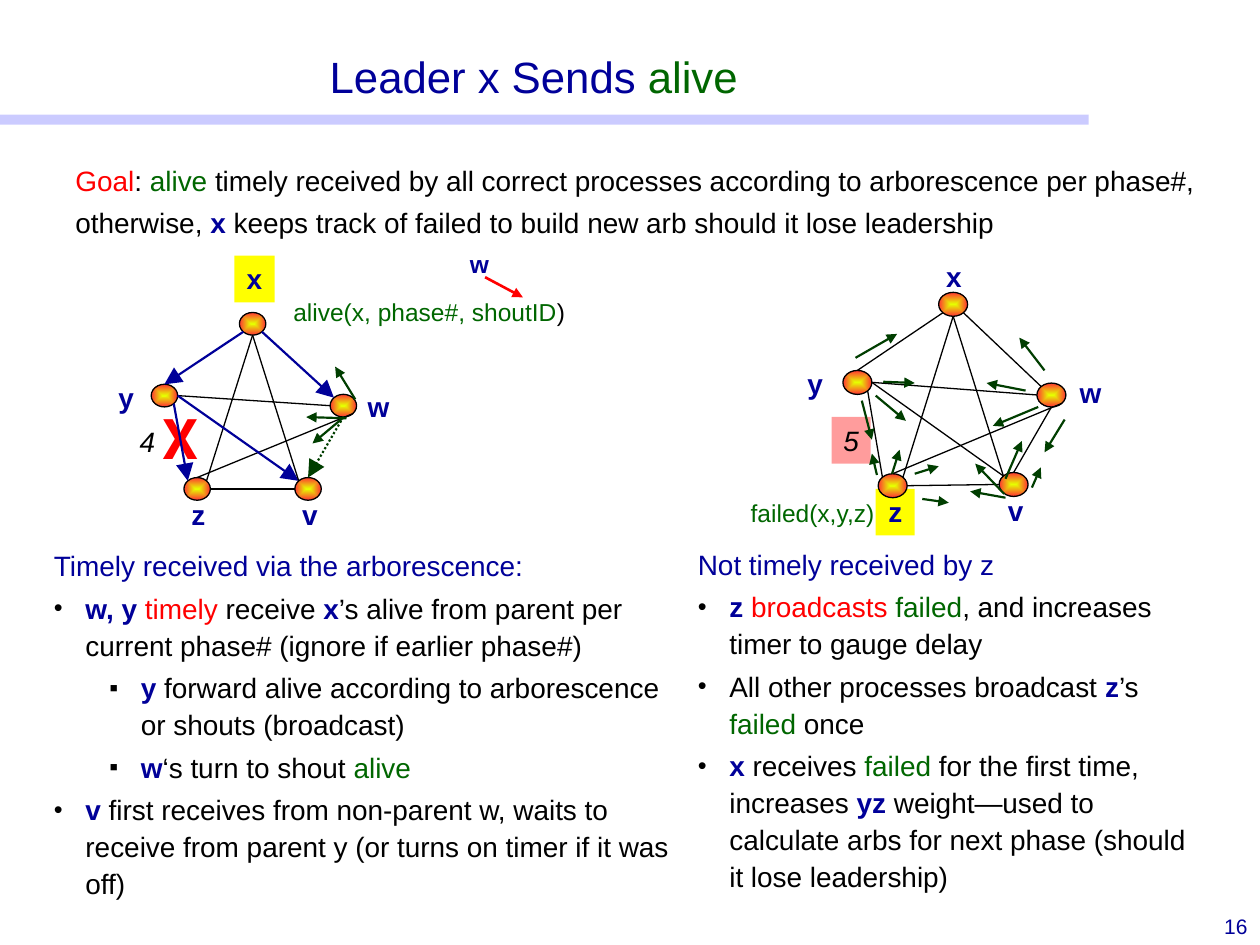
from math import cos, pi, sin
from pptx import Presentation
from pptx.dml.color import RGBColor
from pptx.enum.dml import MSO_LINE_DASH_STYLE as DASH
from pptx.enum.shapes import MSO_CONNECTOR as CONN, MSO_SHAPE as SHAPE
from pptx.enum.text import MSO_ANCHOR as ANCHOR, PP_ALIGN as ALIGN
from pptx.oxml import parse_xml
from pptx.oxml.ns import nsdecls, qn
from pptx.util import Inches, Pt

THEME = {
    "font": "Arial", "cross_font": "Roboto",
    "navy": "000099", "green": "006600", "red": "FF0000", "black": "000000",
    "dark": "003E00", "yellow": "FFFF00", "lavender": "9999FF",
    "node_in": "E6FF00", "node_out": "FF3333",
    "title": 25, "body": 16, "note": 14, "number": 12, "cross": 32,
}
STYLES = {
    "n": {"color": "navy"}, "N": {"color": "navy", "bold": True},
    "g": {"color": "green"}, "r": {"color": "red"}, "k": {"color": "black"},
    "i": {"color": "black", "italic": True},
    "X": {"color": "red", "bold": True, "font": "cross_font"},
}
LINES = {
    "edge": {"color": "black", "width": 0.75},
    "tree": {"color": "navy", "width": 1.25, "head": "lg"},
    "dotted": {"color": "dark", "width": 1.25, "head": "lg", "dash": DASH.ROUND_DOT},
    "shout": {"color": "dark", "width": 1.25, "head": "med"},
    "pointer": {"color": "red", "width": 1.5, "head": "med"},
}
BULLETS = {1: ("•", 0.25), 2: ("▪", 0.69)}

TITLE = [(0, [("Leader x Sends ", "n"), ("alive", "g")])]
GOAL = [
    (0, [("Goal", "r"), (": ", "k"), ("alive", "g"),
         (" timely received by all correct processes according to arborescence per phase#,", "k")]),
    (0, [("otherwise, ", "k"), ("x", "N"),
         (" keeps track of failed to build new arb should it lose leadership", "k")]),
]
TIMELY = [
    (0, [("Timely received via the arborescence:", "n")]),
    (1, [("w, y ", "N"), ("timely", "r"), (" receive ", "k"), ("x", "N"),
         ("’s alive from parent per current phase# (ignore if earlier phase#)", "k")]),
    (2, [("y", "N"), (" forward alive according to arborescence or shouts (broadcast)", "k")]),
    (2, [("w", "N"), ("‘s turn to shout ", "k"), ("alive", "g")]),
    (1, [("v", "N"), (" first receives from non-parent w, waits to receive from parent y "
                      "(or turns on timer if it was off)", "k")]),
]
NOT_TIMELY = [
    (0, [("Not timely received by z", "n")]),
    (1, [("z ", "N"), ("broadcasts ", "r"), ("failed", "g"),
         (", and increases timer to gauge delay", "k")]),
    (1, [("All other processes broadcast ", "k"), ("z", "N"), ("’s ", "k"),
         ("failed", "g"), (" once", "k")]),
    (1, [("x ", "N"), ("receives ", "k"), ("failed ", "g"),
         ("for the first time, increases ", "k"), ("yz ", "N"),
         ("weight—used to calculate arbs for next phase (should it lose leadership)", "k")]),
]
TEXTS = [
    ((9.5, 7.2, 0.5, 0.3), [(0, [("16", "n")])], "number", ALIGN.RIGHT),
    ((0.5, 1.22, 9.2, 0.75), GOAL, "body", ALIGN.LEFT),
    ((0.09, 0.3, 8.29, 0.56), TITLE, "title", ALIGN.CENTER),
    ((0.33, 4.28, 5.21, 3.22), TIMELY, "body", ALIGN.LEFT),
    ((5.44, 4.27, 4.12, 3.54), NOT_TIMELY, "body", ALIGN.LEFT),
    ((2.23, 2.31, 2.94, 0.35), [(0, [("alive(x, phase#, shoutID", "g"), (")", "k")])], "note", ALIGN.LEFT),
    ((5.86, 3.9, 1.4, 0.6), [(0, [("failed(x,y,z)", "g")])], "note", ALIGN.LEFT),
]

# Edge ends are a node name and a connection site, counted anticlockwise from the top.
EDGES = ["w5 z0", "x3 y0", "x4 z7", "y5 z1", "x5 w1", "y6 w2", "y6 v1", "w4 v0", "z6 v2", "x4 v1"]
GRAPHS = [
    {
        "size": (0.21, 0.18),
        "nodes": {"y": (1.2, 3.05), "z": (1.46, 3.79), "w": (2.62, 3.13),
                  "x": (1.9, 2.48), "v": (2.34, 3.79)},
        "labels": [
            ("X", (1.19, 3.15, 0.48, 0.64), "X", "cross", None),
            ("y", (0.84, 2.97, 0.32, 0.37), "N", "body", None),
            ("z", (1.42, 3.9, 0.31, 0.37), "N", "body", None),
            ("w", (2.82, 3.04, 0.37, 0.37), "N", "body", None),
            ("x", (1.86, 2.03, 0.32, 0.37), "N", "body", ("yellow", 100)),
            ("v", (2.3, 3.9, 0.32, 0.37), "N", "body", None),
            ("4", (0.93, 3.32, 0.48, 0.37), "i", "body", None),
            ("w", (3.61, 1.93, 0.39, 0.35), "N", "note", None),
        ],
        "styled": {"x3 y0": "tree", "y5 z1": "tree", "x5 w1": "tree",
                   "y6 v1": "tree", "w4 v0": "dotted"},
        "arrows": [
            ("pointer", 3.85, 2.2, 4.15, 2.36), ("shout", 2.75, 3.32, 2.43, 3.31),
            ("shout", 2.82, 3.17, 2.66, 2.91), ("shout", 2.73, 3.31, 2.48, 3.52),
        ],
    },
    {
        "size": (0.23, 0.19),
        "nodes": {"y": (6.69, 2.94), "z": (6.97, 3.76), "x": (7.45, 2.32),
                  "w": (8.23, 3.04), "v": (7.93, 3.75)},
        "labels": [
            ("y", (6.31, 2.86, 0.32, 0.37), "N", "body", None),
            ("z", (6.95, 3.88, 0.31, 0.37), "N", "body", ("yellow", 100)),
            ("w", (8.47, 2.93, 0.37, 0.37), "N", "body", None),
            ("x", (7.41, 2.01, 0.32, 0.37), "N", "body", None),
            ("5", (6.6, 3.31, 0.31, 0.37), "i", "body", ("red", 39)),
            ("v", (7.9, 3.87, 0.32, 0.37), "N", "body", None),
        ],
        "styled": {},
        "arrows": [("shout", *ends) for ends in [
            (6.96, 3.77, 6.92, 3.6), (7.08, 3.76, 7.14, 3.57), (7.26, 3.76, 7.45, 3.7),
            (7.32, 3.96, 7.53, 3.99), (8.45, 3.33, 8.29, 3.59), (8.24, 3.23, 7.88, 3.38),
            (8.14, 3.1, 7.83, 3.04), (8.29, 2.94, 8.09, 2.68), (6.79, 2.84, 7.12, 2.65),
            (6.95, 3.14, 7.19, 3.34), (7.01, 3.03, 7.26, 3.04), (6.84, 3.18, 6.92, 3.49),
            (7.98, 3.95, 7.7, 3.9), (7.97, 3.92, 7.74, 3.68), (7.98, 3.8, 8.11, 3.5),
            (8.19, 3.87, 8.26, 3.71),
        ]],
    },
]


def rgb(name):
    return RGBColor.from_string(THEME[name])


def add_xml(parent, tag, attrs="", inner=""):
    parent.append(parse_xml(f"<a:{tag} {nsdecls('a')} {attrs}>{inner}</a:{tag}>"))


def write(tf, paragraphs, size, align, spacing=1.0):
    for n, (level, runs) in enumerate(paragraphs):
        p = tf.add_paragraph() if n else tf.paragraphs[0]
        if level:
            char, margin = BULLETS[level]
            pr = p._p.get_or_add_pPr()
            pr.set("marL", str(Inches(margin)))
            pr.set("indent", str(Inches(-0.25)))
            add_xml(pr, "buClr", inner=f'<a:srgbClr val="{THEME["black"]}"/>')
            add_xml(pr, "buSzPct", 'val="90000"')
            add_xml(pr, "buFont", f'typeface="{THEME["font"]}"')
            add_xml(pr, "buChar", f'char="{char}"')
        fmt = {"alignment": align, "line_spacing": spacing,
               "space_before": Pt(0.2 * THEME[size] if n else 0), "level": max(level - 1, 0)}
        for key, value in fmt.items():
            setattr(p, key, value)
        for text, style in runs:
            look = STYLES[style]
            r = p.add_run()
            r.text = text
            fmt = {"name": THEME[look.get("font", "font")], "size": Pt(THEME[size]),
                   "bold": look.get("bold", False), "italic": look.get("italic", False)}
            for key, value in fmt.items():
                setattr(r.font, key, value)
            r.font.color.rgb = rgb(look["color"])


def add_shape(s, kind, box, fill=None, alpha=100):
    sp = s.shapes.add_shape(kind, *map(Inches, box))
    sp.shadow.inherit = False
    sp.line.fill.background()
    if fill:
        sp.fill.solid()
        sp.fill.fore_color.rgb = rgb(fill)
        if alpha < 100:
            add_xml(sp.fill._xPr.find(".//" + qn("a:srgbClr")), "alpha", f'val="{alpha * 1000}"')
    return sp


def add_label(s, text, box, style, size, fill):
    if fill:
        sp = add_shape(s, SHAPE.RECTANGLE, box, *fill)
    else:
        sp = s.shapes.add_textbox(*map(Inches, box))
    sp.text_frame.word_wrap = False
    sp.text_frame.vertical_anchor = ANCHOR.TOP
    write(sp.text_frame, [(0, [(text, style)])], size, ALIGN.CENTER)


def add_node(s, box):
    sp = add_shape(s, SHAPE.OVAL, box)
    sp.fill.gradient()
    for stop, name in zip(sp.fill.gradient_stops, ("node_in", "node_out")):
        stop.color.rgb = rgb(name)
    grad = sp._element.spPr.find(qn("a:gradFill"))
    grad.remove(grad.find(qn("a:lin")))
    add_xml(grad, "path", 'path="shape"', '<a:fillToRect l="50000" t="50000" r="50000" b="50000"/>')
    sp.line.color.rgb = rgb("black")
    sp.line.width = Pt(0.75)


def add_line(s, style, *ends):
    look = LINES[style]
    c = s.shapes.add_connector(CONN.STRAIGHT, *map(Inches, ends))
    c.line.color.rgb = rgb(look["color"])
    c.line.width = Pt(look["width"])
    if "dash" in look:
        c.line.dash_style = look["dash"]
    if "head" in look:
        head = look["head"]
        add_xml(c.line._get_or_add_ln(), "tailEnd", f'type="triangle" w="{head}" len="{head}"')
    add_xml(c._element.spPr, "effectLst")


def site(graph, end):
    (x, y), (w, h) = graph["nodes"][end[0]], graph["size"]
    turn = int(end[1]) * pi / 4
    return x + w / 2 * (1 - sin(turn)), y + h / 2 * (1 - cos(turn))


def add_graph(s, graph):
    for label in graph["labels"]:
        add_label(s, *label)
    for place in graph["nodes"].values():
        add_node(s, place + graph["size"])
    for edge in EDGES:
        start, end = edge.split()
        add_line(s, graph["styled"].get(edge, "edge"), *site(graph, start), *site(graph, end))
    for arrow in graph["arrows"]:
        add_line(s, *arrow)


def main():
    prs = Presentation()
    prs.slide_width, prs.slide_height = Inches(10), Inches(7.5)
    s = prs.slides.add_slide(prs.slide_layouts[6])
    add_shape(s, SHAPE.RECTANGLE, (0, 0.91, 8.64, 0.08), "lavender", 50)
    for box, paragraphs, size, align in TEXTS:
        tf = s.shapes.add_textbox(*map(Inches, box)).text_frame
        tf.word_wrap = True
        tf.vertical_anchor = ANCHOR.BOTTOM if size == "title" else ANCHOR.TOP
        write(tf, paragraphs, size, align, 1.1 if size in ("title", "body") else 1.0)
    for graph in GRAPHS:
        add_graph(s, graph)
    prs.save("out.pptx")


if __name__ == "__main__":
    main()
